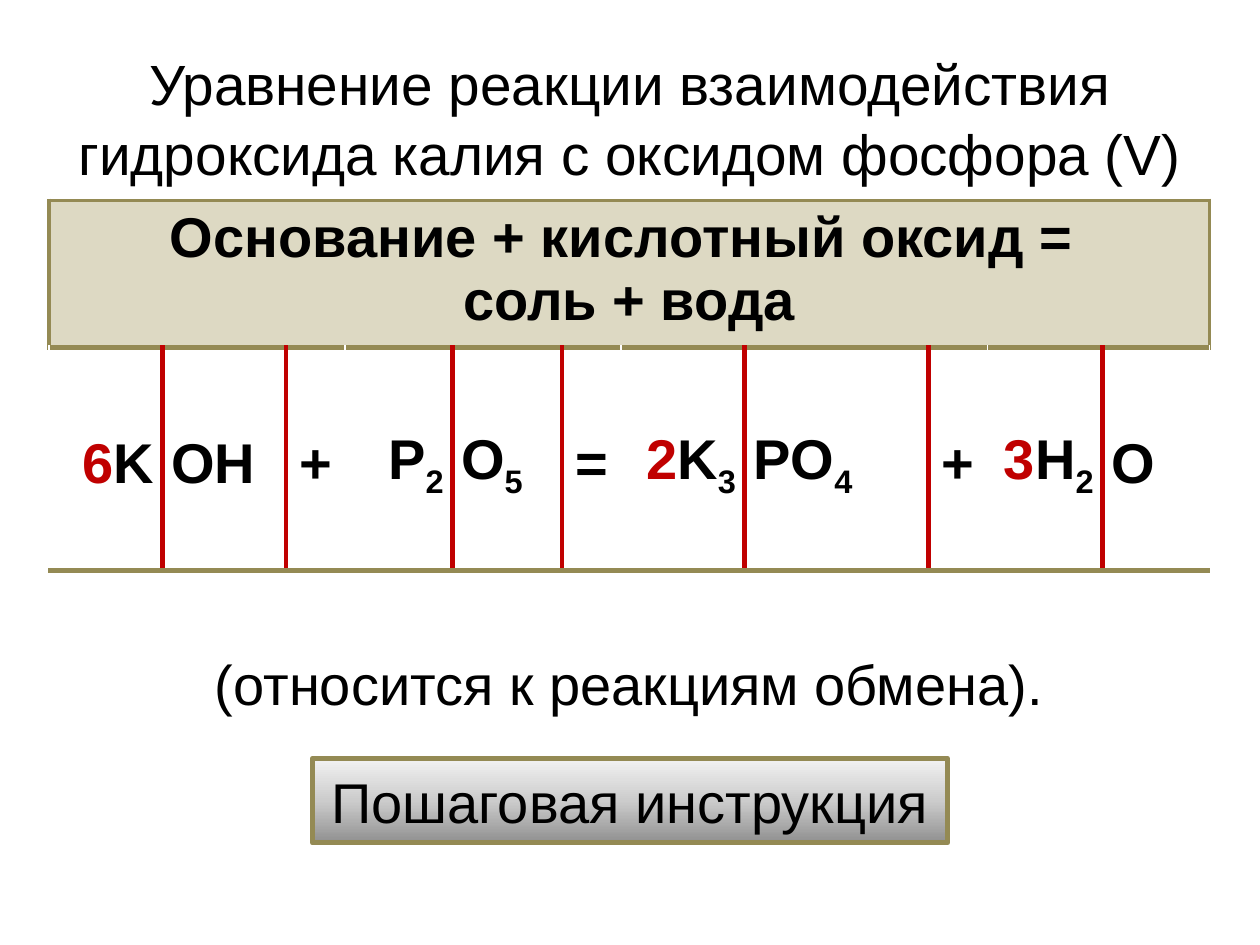
from pptx import Presentation
from pptx.dml.color import RGBColor
from pptx.enum.shapes import MSO_SHAPE
from pptx.enum.text import MSO_ANCHOR, PP_ALIGN
from pptx.oxml import parse_xml
from pptx.oxml.ns import nsdecls
from pptx.util import Inches, Pt

BLACK = RGBColor(0x00, 0x00, 0x00)
RED = RGBColor(0xC0, 0x00, 0x00)
OLIVE = RGBColor(0x94, 0x8A, 0x54)
BEIGE = RGBColor(0xDD, 0xD9, 0xC3)
GREYS = [RGBColor(0x90, 0x90, 0x90), RGBColor(0xCC, 0xCC, 0xCC), RGBColor(0xF2, 0xF2, 0xF2)]
L, C, R = PP_ALIGN.LEFT, PP_ALIGN.CENTER, PP_ALIGN.RIGHT


def write(p, runs, align=C, spacing=None, **fmt):
    p.alignment = align
    p.line_spacing = spacing
    for text, color, sub in runs:
        r = p.add_run()
        r.text = text
        for key, value in {"name": "Arial", "size": Pt(32), "bold": False, **fmt}.items():
            setattr(r.font, key, value)
        r.font.color.rgb = color
        if sub:
            r.font._element.set("baseline", "-25000")


def border(cell, **sides):
    tcPr = cell._tc.get_or_add_tcPr()
    for side in "LRTB":
        if side in sides:
            color, width = sides[side]
            tcPr.append(parse_xml(
                f'<a:ln{side} {nsdecls("a")} w="{Pt(width)}"><a:solidFill>'
                f'<a:srgbClr val="{color}"/></a:solidFill></a:ln{side}>'))


prs = Presentation()
prs.slide_width, prs.slide_height = Inches(10), Inches(7.5)
s = prs.slides.add_slide(prs.slide_layouts[6])

title = s.shapes.add_textbox(Inches(0.5), Inches(0.3), Inches(9), Inches(1.25))
tf = title.text_frame
tf.word_wrap = True
tf.vertical_anchor = MSO_ANCHOR.MIDDLE
write(tf.paragraphs[0],
      [("Уравнение реакции взаимодействия гидроксида калия с оксидом фосфора (V)", BLACK, False)],
      spacing=1.04, size=Pt(32.4))

widths = [0.9, 0.98, 0.47, 0.85, 0.87, 0.47, 0.98, 1.46, 0.47, 0.91, 0.85]
heights = [1.1, 1.77, 1.77]
table = s.shapes.add_table(3, 11, Inches(0.39), Inches(1.59),
                           Inches(sum(widths)), Inches(sum(heights))).table
table.first_row = table.horz_banding = False
for col, w in zip(table.columns, widths):
    col.width = Inches(w)
for row, h in zip(table.rows, heights):
    row.height = Inches(h)

split_cols = [1, 4, 7, 10]
for i in range(11):
    border(table.cell(0, i), L=(OLIVE, 2.25), R=(OLIVE, 2.25), T=(OLIVE, 2.25), B=(OLIVE, 3))
    sides = {"T": (OLIVE, 3)}
    if i in split_cols:
        sides["L"] = (RED, 3)
    if i + 1 in split_cols:
        sides["R"] = (RED, 3)
    border(table.cell(1, i), **sides)
for r in (0, 2):
    table.cell(r, 0).merge(table.cell(r, 10))
for cell in table.iter_cells():
    cell.fill.background()

head = table.cell(0, 0)
head.fill.solid()
head.fill.fore_color.rgb = BEIGE
tf = head.text_frame
write(tf.paragraphs[0], [("Основание + кислотный оксид = ", BLACK, False)], bold=True)
write(tf.add_paragraph(), [("соль + вода", BLACK, False)], bold=True)

equation = [
    (R, "6", "K", ""), (L, "", "OH", ""), (C, "", "+", ""),
    (R, "", "P", "2"), (L, "", "O", "5"), (C, "", "=", ""),
    (R, "2", "K", "3"), (L, "", "PO", "4"), (C, "", "+", ""),
    (R, "3", "H", "2"), (L, "", "O", ""),
]
for i, (align, factor, symbol, index) in enumerate(equation):
    runs = [(factor, RED, False), (symbol, BLACK, False), (index, BLACK, True)]
    write(table.cell(1, i).text_frame.paragraphs[0], [run for run in runs if run[0]],
          align, 1.15, bold=True)
write(table.cell(2, 0).text_frame.paragraphs[0],
      [("(относится к реакциям обмена).", BLACK, False)], spacing=1.15)
for cell in [table.cell(1, i) for i in range(11)] + [table.cell(2, 0)]:
    cell.vertical_anchor = MSO_ANCHOR.MIDDLE
    cell.margin_left = cell.margin_right = Inches(0.07)
    cell.margin_top = cell.margin_bottom = 0

button = s.shapes.add_shape(MSO_SHAPE.RECTANGLE, Inches(2.48), Inches(6.02), Inches(5.04), Inches(0.67))
button.shadow.inherit = False
button.line.color.rgb = OLIVE
button.line.width = Pt(3)
button.fill.gradient()
stops = button.fill._fill._gradFill.gsLst
for stop in list(stops):
    stops.remove(stop)
for pos, color in zip((0, 50000, 100000), GREYS):
    stops.append(parse_xml(f'<a:gs {nsdecls("a")} pos="{pos}"><a:srgbClr val="{color}"/></a:gs>'))
button.fill.gradient_angle = 90
tf = button.text_frame
tf.word_wrap = False
tf.vertical_anchor = MSO_ANCHOR.MIDDLE
write(tf.paragraphs[0], [("Пошаговая инструкция", BLACK, False)])

prs.save("out.pptx")
